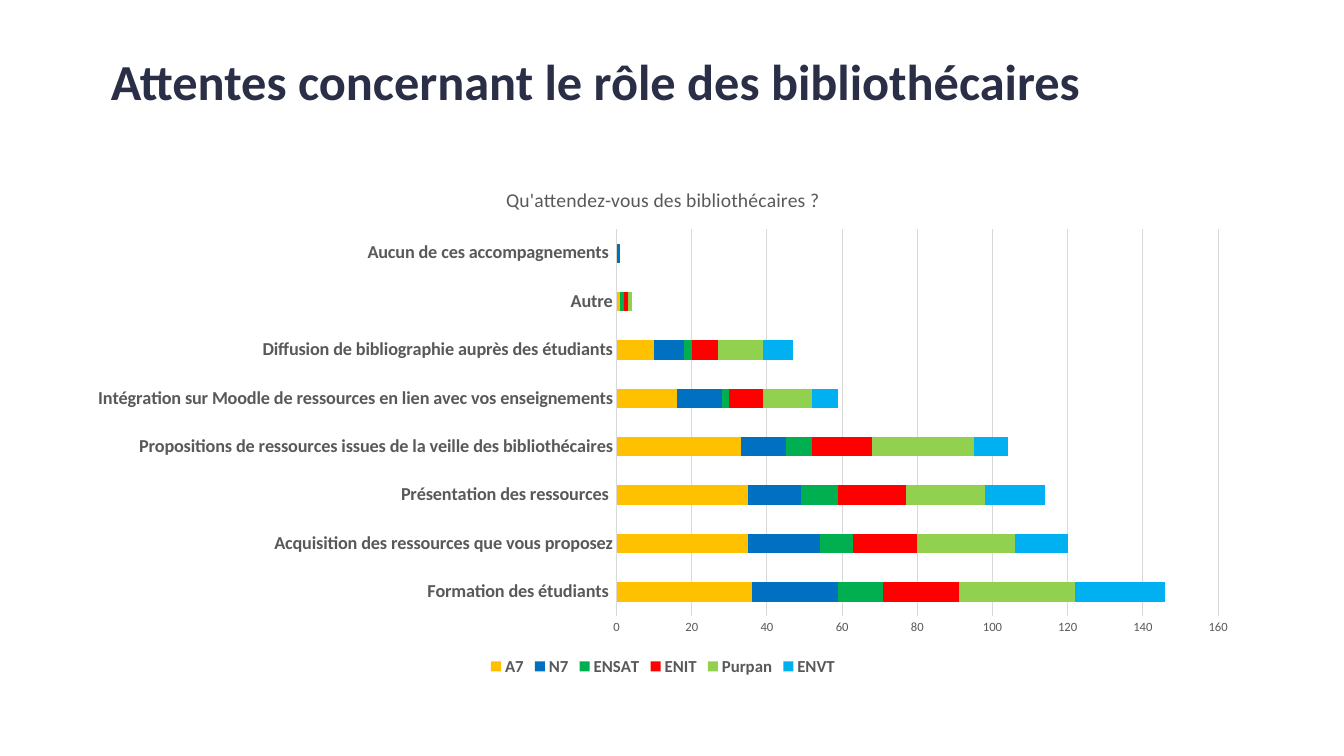
from pptx import Presentation
from pptx.chart.data import CategoryChartData
from pptx.dml.color import RGBColor
from pptx.enum.chart import XL_CHART_TYPE, XL_LEGEND_POSITION, XL_TICK_MARK
from pptx.enum.text import MSO_ANCHOR, PP_ALIGN
from pptx.util import Inches, Pt

# Content
FONT = "Calibri"
NAVY, GREY, LIGHT_GREY = "2A2E46", "595959", "D9D9D9"
TITLE = "Attentes concernant le rôle des bibliothécaires"
QUESTION = "Qu'attendez-vous des bibliothécaires ?"
EXPECTATIONS = [
    "Formation des étudiants ",
    "Acquisition des ressources que vous proposez",
    "Présentation des ressources ",
    "Propositions de ressources issues de la veille des bibliothécaires",
    "Intégration sur Moodle de ressources en lien avec vos enseignements",
    "Diffusion de bibliographie auprès des étudiants",
    "Autre",
    "Aucun de ces accompagnements ",
]
SCHOOLS = [
    ("A7", "FFC000", (36, 35, 35, 33, 16, 10, 1, 0)),
    ("N7", "0070C0", (23, 19, 14, 12, 12, 8, 0, 1)),
    ("ENSAT", "00B050", (12, 9, 10, 7, 2, 2, 1, 0)),
    ("ENIT", "FF0000", (20, 17, 18, 16, 9, 7, 1, 0)),
    ("Purpan", "92D050", (31, 26, 21, 27, 13, 12, 1, 0)),
    ("ENVT", "00B0F0", (24, 14, 16, 9, 7, 8, 0, 0)),
]


def color(value):
    return RGBColor.from_string(value)


def style_font(font, size, bold=False, font_color=GREY):
    font.name = FONT
    font.size = Pt(size)
    font.bold = bold
    font.color.rgb = color(font_color)


def style_line(line):
    line.color.rgb = color(LIGHT_GREY)
    line.width = Pt(0.75)


def add_title(slide):
    title = slide.shapes.title
    title.left, title.top = Inches(1), Inches(0.26)
    title.width, title.height = Inches(11.5), Inches(1.16)
    frame = title.text_frame
    frame.word_wrap = True
    frame.vertical_anchor = MSO_ANCHOR.MIDDLE
    paragraph = frame.paragraphs[0]
    paragraph.alignment = PP_ALIGN.LEFT
    paragraph.line_spacing = 0.9
    run = paragraph.add_run()
    run.text = TITLE
    style_font(run.font, 36, True, NAVY)


def add_expectations_chart(slide):
    data = CategoryChartData()
    data.categories = EXPECTATIONS
    for name, _, values in SCHOOLS:
        data.add_series(name, values)
    chart = slide.shapes.add_chart(
        XL_CHART_TYPE.BAR_STACKED, Inches(0.74), Inches(1.66),
        Inches(11.67), Inches(5.09), data).chart
    style_font(chart.font, 10, font_color="000000")

    # Chart title and legend
    chart.has_title = True
    title_frame = chart.chart_title.text_frame
    run = title_frame.paragraphs[0].add_run()
    run.text = QUESTION
    style_font(run.font, 14)
    chart.chart_title.include_in_layout = False
    chart.has_legend = True
    chart.legend.position = XL_LEGEND_POSITION.BOTTOM
    chart.legend.include_in_layout = False
    style_font(chart.legend.font, 12, True)

    # Bars
    plot = chart.plots[0]
    plot.gap_width, plot.overlap = 150, 100
    plot.vary_by_categories = False
    for series, (_, fill_color, _) in zip(plot.series, SCHOOLS):
        series.format.fill.solid()
        series.format.fill.fore_color.rgb = color(fill_color)

    # Axes
    for axis, size, bold in ((chart.category_axis, 13, True),
                             (chart.value_axis, 9, False)):
        axis.major_tick_mark = axis.minor_tick_mark = XL_TICK_MARK.NONE
        style_font(axis.tick_labels.font, size, bold)
    style_line(chart.category_axis.format.line)
    value_axis = chart.value_axis
    value_axis.minimum_scale, value_axis.maximum_scale = 0, 160
    value_axis.major_unit = 20
    value_axis.format.line.fill.background()
    value_axis.has_major_gridlines = True
    style_line(value_axis.major_gridlines.format.line)


def main():
    presentation = Presentation()
    presentation.slide_width = Inches(13.33)
    presentation.slide_height = Inches(7.5)
    slide = presentation.slides.add_slide(presentation.slide_layouts[5])
    add_title(slide)
    add_expectations_chart(slide)
    presentation.save("out.pptx")


if __name__ == "__main__":
    main()
